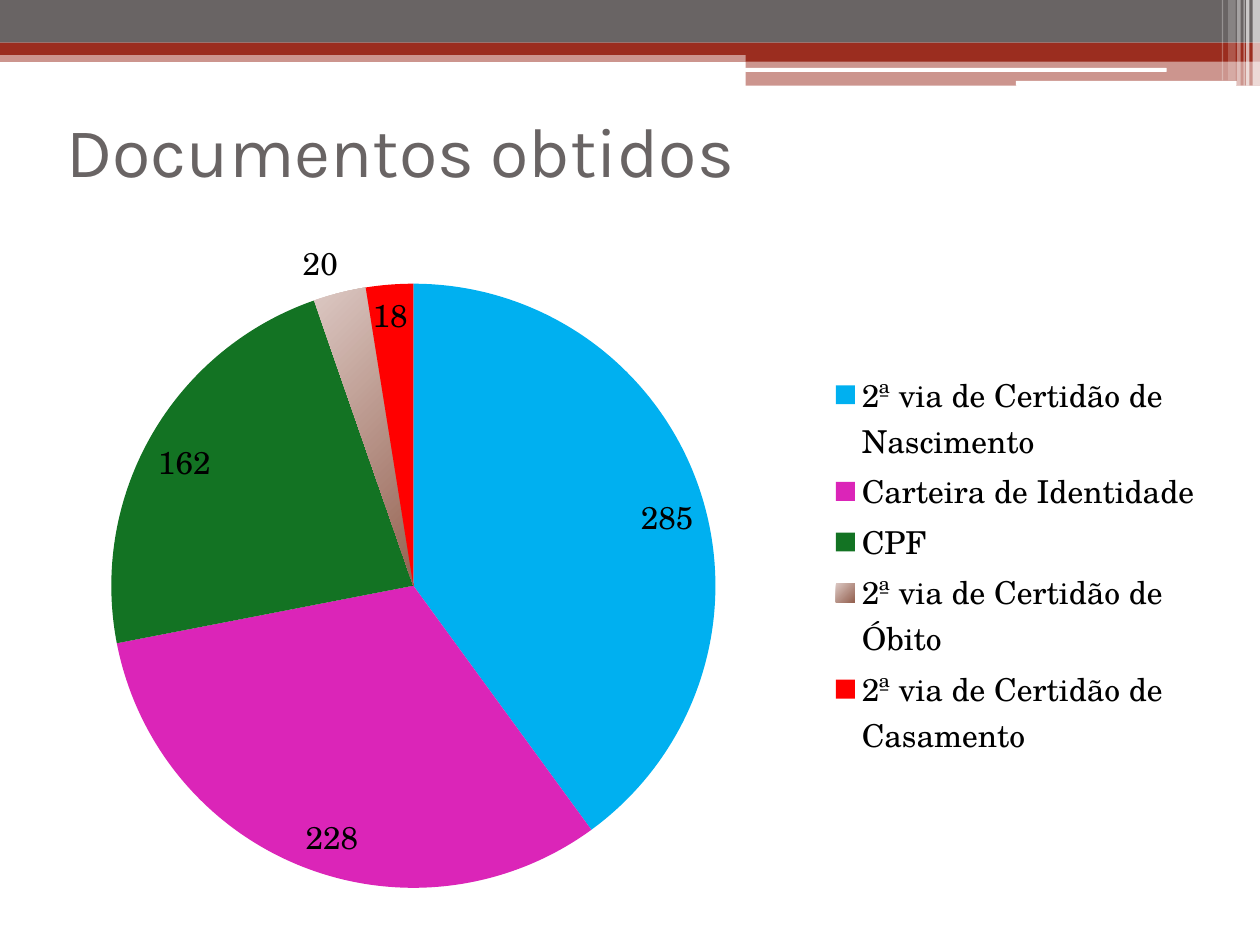
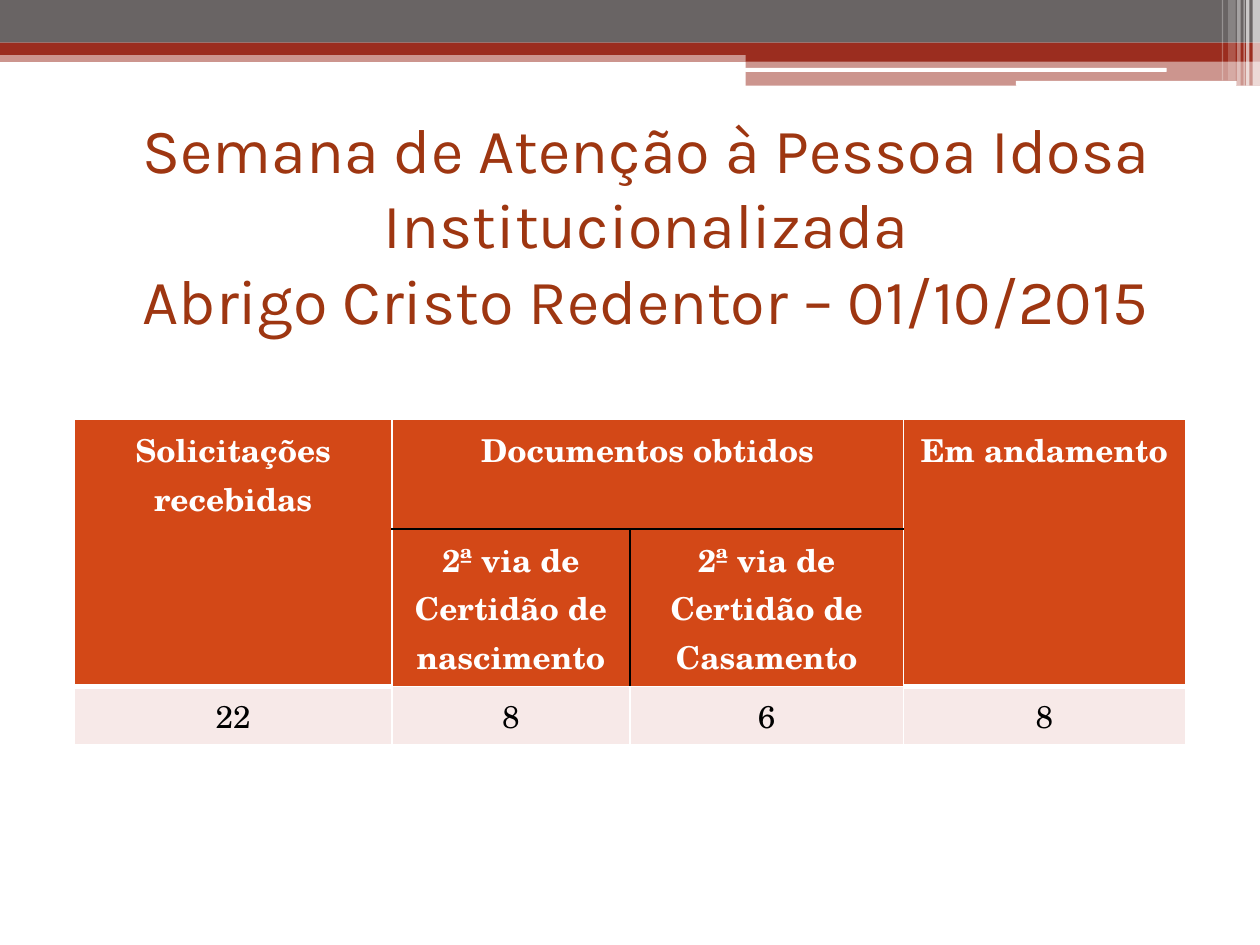
from lxml.etree import SubElement
from pptx import Presentation
from pptx.chart.data import CategoryChartData
from pptx.dml.color import RGBColor
from pptx.enum.chart import XL_CHART_TYPE, XL_LABEL_POSITION as LABEL_AT, XL_LEGEND_POSITION
from pptx.enum.shapes import MSO_SHAPE as SHAPE
from pptx.enum.text import MSO_ANCHOR, PP_ALIGN
from pptx.oxml import parse_xml
from pptx.oxml.ns import nsdecls, qn
from pptx.util import Cm, Pt

# Shared style
GREY = RGBColor(0x69, 0x64, 0x64)
BRICK = RGBColor(0x9B, 0x2D, 0x1F)
RUST = RGBColor(0x9E, 0x36, 0x11)
ORANGE = RGBColor(0xD3, 0x48, 0x17)
BLUSH = RGBColor(0xF7, 0xE9, 0xE8)
WHITE = RGBColor(0xFF, 0xFF, 0xFF)
BLACK = RGBColor(0x00, 0x00, 0x00)
SKY = RGBColor(0x00, 0xB0, 0xF0)
MAGENTA = RGBColor(0xDB, 0x25, 0xB8)
GREEN = RGBColor(0x13, 0x73, 0x23)
BROWN = RGBColor(0x95, 0x62, 0x51)
PALE_BROWN = RGBColor(0xDC, 0xC8, 0xC3)
RED = RGBColor(0xFF, 0x00, 0x00)
TITLE_FONT, BODY_FONT = "Karla", "TeX Gyre Schola"
BODY_SIZE = Pt(18)

# Header bands in cm: shape, left, top, width, height, colour, opacity in percent
BANDS = [
    (SHAPE.RECTANGLE, 0, 1.02, 25.4, 0.23, BRICK, 50),
    (SHAPE.RECTANGLE, 0, 0, 25.4, 0.86, GREY, 100),
    (SHAPE.RECTANGLE, 0, 0.86, 25.4, 0.25, BRICK, 100),
    (SHAPE.RECTANGLE, 15.03, 0.99, 10.37, 0.25, BRICK, 100),
    (SHAPE.RECTANGLE, 15.03, 1.23, 10.37, 0.5, BRICK, 50),
    (SHAPE.ROUNDED_RECTANGLE, 15.02, 1.37, 8.5, 0.08, WHITE, 100),
    (SHAPE.ROUNDED_RECTANGLE, 20.48, 1.63, 4.45, 0.1, WHITE, 100),
]
# Vertical glints at the right edge: left, width, height, opacity
GLINTS = [(25.25, 0.15, 1.73, 65), (25.12, 0.07, 1.73, 65), (25.07, 0.02, 1.73, 60),
          (24.94, 0.07, 1.73, 40), (24.76, 0.15, 1.62, 20), (24.63, 0.03, 1.62, 30)]
BANDS += [(SHAPE.RECTANGLE, left, 0, width, height, WHITE, opacity)
          for left, width, height, opacity in GLINTS]

# Title in cm: text, left, top, width, height, size, colour, alignment
TITLES = [
    ("Documentos obtidos", 1.09, 1.52, 22.86, 2.97, 40, GREY, PP_ALIGN.LEFT),
    ("Semana de Atenção à Pessoa Idosa Institucionalizada\v"
     "Abrigo Cristo Redentor – 01/10/2015", 1.9, 2.51, 22.25, 3.99, 36, RUST, PP_ALIGN.CENTER),
]


def set_font(font, size, name, color, bold=False):
    font.size, font.name, font.bold = size, name, bold
    font.color.rgb = color


def set_layout(element, left, top, width, height, inner=""):
    """Place a chart part by fractions of the chart area."""
    old = element.find(qn("c:layout"))
    if old is not None:
        element.remove(old)
    layout = parse_xml(
        f'<c:layout {nsdecls("c")}><c:manualLayout>{inner}'
        f'<c:xMode val="edge"/><c:yMode val="edge"/><c:x val="{left}"/><c:y val="{top}"/>'
        f'<c:w val="{width}"/><c:h val="{height}"/></c:manualLayout></c:layout>')
    element.insert(0 if inner else 1, layout)


deck = Presentation()
deck.slide_width, deck.slide_height = Cm(25.4), Cm(19.05)

# Bands and titles of both pages
pages = []
for text, left, top, width, height, size, color, align in TITLES:
    page = deck.slides.add_slide(deck.slide_layouts[6])
    pages.append(page)
    for kind, x, y, w, h, band_color, opacity in BANDS:
        band = page.shapes.add_shape(kind, Cm(x), Cm(y), Cm(w), Cm(h))
        band.shadow.inherit = False
        band.line.fill.background()
        band.fill.solid()
        band.fill.fore_color.rgb = band_color
        if opacity < 100:
            tint = band.fill._xPr.find(".//" + qn("a:srgbClr"))
            SubElement(tint, qn("a:alpha"), val=str(opacity * 1000))
    box = page.shapes.add_textbox(Cm(left), Cm(top), Cm(width), Cm(height))
    frame = box.text_frame
    frame.word_wrap = True
    frame.vertical_anchor = MSO_ANCHOR.MIDDLE
    frame.text = text
    para = frame.paragraphs[0]
    para.alignment = align
    for span in para.runs:
        set_font(span.font, Pt(size), TITLE_FONT, color)

chart_page, table_page = pages

# Pie of documents obtained
DOCUMENTS = [
    ("2ª via de Certidão de Nascimento", 285, SKY),
    ("Carteira de Identidade", 228, MAGENTA),
    ("CPF", 162, GREEN),
    ("2ª via de Certidão de Óbito", 20, BROWN),
    ("2ª via de Certidão de Casamento", 18, RED),
]
chart_data = CategoryChartData()
chart_data.categories = [name for name, _, _ in DOCUMENTS]
chart_data.add_series("Series 1", [count for _, count, _ in DOCUMENTS])
chart = chart_page.shapes.add_chart(
    XL_CHART_TYPE.PIE, Cm(0), Cm(4.32), Cm(24.51), Cm(14), chart_data).chart
chart.has_title = False
set_font(chart.font, BODY_SIZE, BODY_FONT, BLACK)
chart.has_legend = True
chart.legend.position = XL_LEGEND_POSITION.RIGHT
chart.legend.include_in_layout = False
set_layout(chart.legend._element, 0.68, 0.22, 0.31, 0.57)
set_layout(chart._chartSpace.chart.plotArea, 0.09, 0.1, 0.5, 0.87,
           '<c:layoutTarget val="inner"/>')

pie = chart.plots[0]
pie.vary_by_categories = True
pie.has_data_labels = True
pie.data_labels.show_value = True
pie.data_labels.show_percentage = False
pie.data_labels.position = LABEL_AT.INSIDE_END
set_font(pie.data_labels.font, BODY_SIZE, BODY_FONT, BLACK)

for index, (_, _, color) in enumerate(DOCUMENTS):
    point = pie.series[0].points[index]
    fill = point.format.fill
    outside = color == BROWN
    if outside:
        fill.gradient()
        fill.gradient_angle = 315
        for stop, shade in zip(fill.gradient_stops, (PALE_BROWN, BROWN)):
            stop.color.rgb = shade
    else:
        fill.solid()
        fill.fore_color.rgb = color
    label = point.data_label
    set_font(label.font, BODY_SIZE, BODY_FONT, BLACK)
    label.position = LABEL_AT.OUTSIDE_END if outside else LABEL_AT.INSIDE_END

# Table of requests
ROWS = [
    ["Solicitações recebidas", "Documentos obtidos", "", "Em andamento"],
    ["", "2ª via de Certidão de nascimento", "2ª via de Certidão de Casamento", ""],
    ["22", "8", "6", "8"],
]
COLUMN_WIDTHS = [6.4, 4.8, 5.51, 5.69]
ROW_HEIGHTS = [2.2, 3.18, 1.17]
table = table_page.shapes.add_table(
    3, 4, Cm(1.5), Cm(8.46), Cm(sum(COLUMN_WIDTHS)), Cm(sum(ROW_HEIGHTS))).table
table.first_row = table.horz_banding = False
for column, width in zip(table.columns, COLUMN_WIDTHS):
    column.width = Cm(width)
for row, height in zip(table.rows, ROW_HEIGHTS):
    row.height = Cm(height)

# Black rules separate the merged heading from its two parts
BLACK_EDGES = {(0, 1, "B"), (0, 2, "B"), (1, 1, "T"), (1, 2, "T"), (1, 1, "R"), (1, 2, "L")}
for r, texts in enumerate(ROWS):
    for c, text in enumerate(texts):
        cell = table.cell(r, c)
        header = r < 2
        for side in "LRTB":
            color = BLACK if (r, c, side) in BLACK_EDGES else WHITE
            thick = c in (0, 3) and (r, side) in ((0, "B"), (1, "B"), (2, "T"))
            edge = SubElement(cell._tc.get_or_add_tcPr(), qn(f"a:ln{side}"),
                              w=str(Pt(3 if thick else 1)))
            SubElement(SubElement(edge, qn("a:solidFill")), qn("a:srgbClr"), val=str(color))
        cell.fill.solid()
        cell.fill.fore_color.rgb = ORANGE if header else BLUSH
        if text:
            cell.text_frame.text = text
            para = cell.text_frame.paragraphs[0]
            para.alignment = PP_ALIGN.CENTER
            set_font(para.runs[0].font, BODY_SIZE, BODY_FONT, WHITE if header else BLACK, header)

for first, last in [((0, 0), (1, 0)), ((0, 1), (0, 2)), ((0, 3), (1, 3))]:
    table.cell(*first).merge(table.cell(*last))

deck.save("out.pptx")
